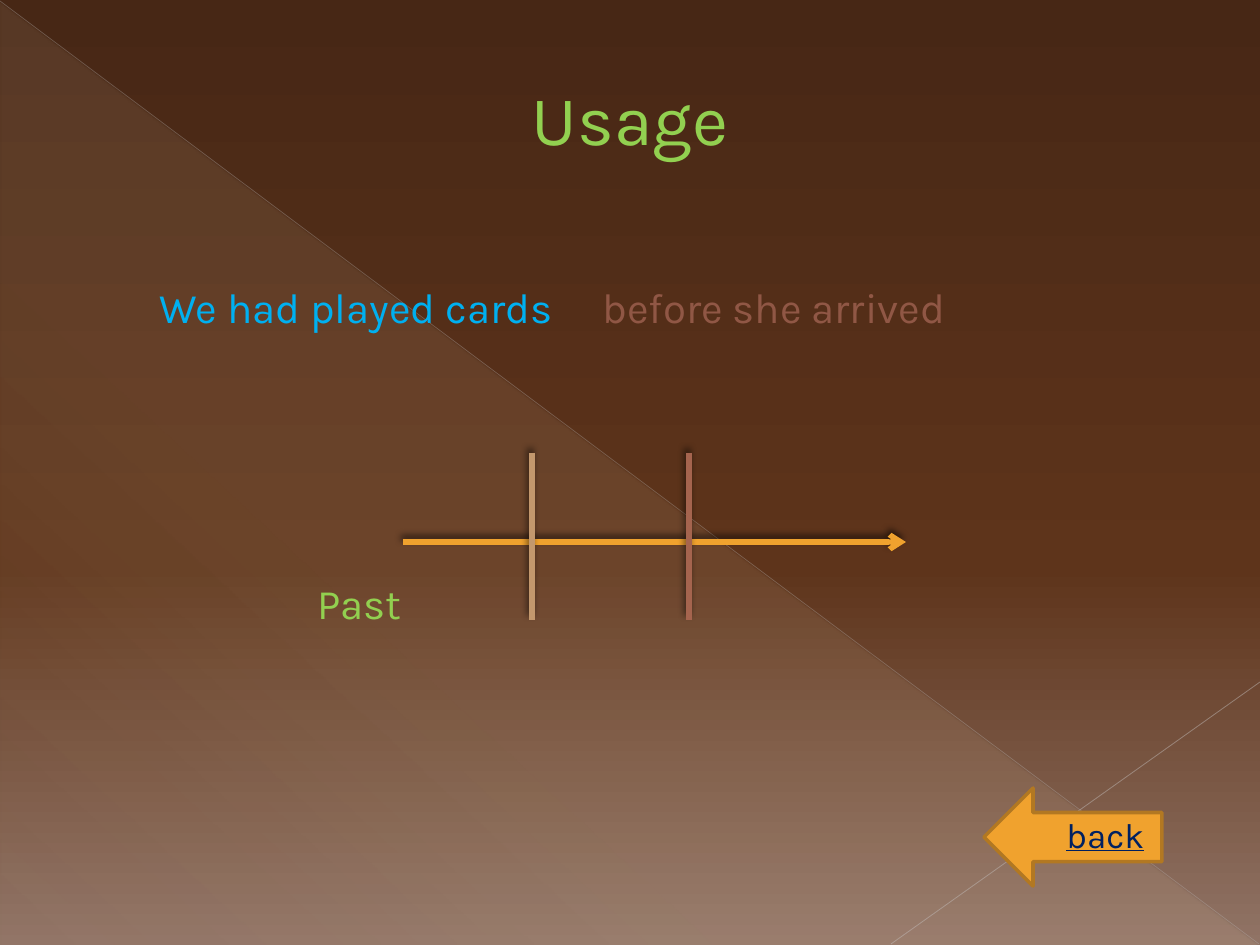
import lxml.etree
import pptx
import pptx.dml.color
import pptx.enum.shapes
import pptx.enum.text
import pptx.oxml
import pptx.oxml.ns
import pptx.util

EMU_PER_PX = 914400 / 126
FONT = "Karla"
GREEN, BLUE, BROWN, NAVY = "92D050", "00B0F0", "905745", "002060"
AMBER, DARK_AMBER, TAN, RUST = "F0A22E", "B27822", "C3986D", "A5644E"
CREAM = "FBEEC9"
SHAPES = pptx.enum.shapes.MSO_SHAPE
NS = pptx.oxml.ns.nsdecls("a")


def px(*lengths):
    return [pptx.util.Emu(round(length * EMU_PER_PX)) for length in lengths]


def rgb(color):
    return pptx.dml.color.RGBColor.from_string(color)


def set_alpha(solid_fill, percent):
    color = solid_fill.find(pptx.oxml.ns.qn("a:srgbClr"))
    alpha = lxml.etree.SubElement(color, pptx.oxml.ns.qn("a:alpha"))
    alpha.set("val", str(percent * 1000))


def make_gradient(owner, stops, angle):
    """Replace the solid fill directly inside owner; stops are (position, color, opacity)."""
    stop_xml = "".join(
        f'<a:gs pos="{position * 1000}"><a:srgbClr val="{color}">'
        f'<a:alpha val="{opacity * 1000}"/></a:srgbClr></a:gs>'
        for position, color, opacity in stops
    )
    gradient = pptx.oxml.parse_xml(
        f'<a:gradFill {NS} rotWithShape="1"><a:gsLst>{stop_xml}</a:gsLst>'
        f'<a:lin ang="{angle * 60000}" scaled="0"/></a:gradFill>'
    )
    owner.replace(owner.find(pptx.oxml.ns.qn("a:solidFill")), gradient)


class SlideBuilder:
    def __init__(self, slide):
        self.slide = slide

    def background(self, stops, angle):
        self.slide.background.fill.solid()
        make_gradient(self.slide.element.find(".//" + pptx.oxml.ns.qn("p:bgPr")), stops, angle)

    def shape(self, kind, box, fill):
        shape = self.slide.shapes.add_shape(kind, *px(*box))
        shape.shadow.inherit = False
        shape.fill.solid()
        shape.fill.fore_color.rgb = rgb(fill)
        shape.line.fill.background()
        return shape

    def line(self, start, end, color, width, opacity=100, shadow=False, arrow=False):
        line = self.slide.shapes.add_connector(
            pptx.enum.shapes.MSO_CONNECTOR.STRAIGHT, *px(*start, *end))
        line.line.width = pptx.util.Pt(width)
        line.line.color.rgb = rgb(color)
        properties = line.line._get_or_add_ln()
        if opacity < 100:
            set_alpha(properties.find(pptx.oxml.ns.qn("a:solidFill")), opacity)
        if arrow:
            tail = lxml.etree.SubElement(properties, pptx.oxml.ns.qn("a:tailEnd"))
            tail.set("type", "arrow")
        cast = (
            f'<a:outerShdw blurRad="{pptx.util.Pt(4)}" dist="{pptx.util.Pt(3)}" '
            f'dir="{245 * 60000}" rotWithShape="0">'
            '<a:srgbClr val="000000"><a:alpha val="60000"/></a:srgbClr></a:outerShdw>'
        ) if shadow else ""
        line._element.spPr.append(
            pptx.oxml.parse_xml(f"<a:effectLst {NS}>{cast}</a:effectLst>"))

    def text(self, wording, box, size, color, centered=False, underline=None):
        frame = self.slide.shapes.add_textbox(*px(*box)).text_frame
        frame.word_wrap = True
        frame.auto_size = pptx.enum.text.MSO_AUTO_SIZE.SHAPE_TO_FIT_TEXT
        paragraph = frame.paragraphs[0]
        paragraph.text = wording
        if centered:
            paragraph.alignment = pptx.enum.text.PP_ALIGN.CENTER
        font = paragraph.font
        font.name = FONT
        font.size = pptx.util.Pt(size)
        font.color.rgb = rgb(color)
        font.underline = underline


def main():
    presentation = pptx.Presentation()
    presentation.slide_width, presentation.slide_height = px(1260, 945)
    page = SlideBuilder(presentation.slides.add_slide(presentation.slide_layouts[6]))

    page.background([(0, "472715", 100), (60, "5E341B", 100), (100, "907365", 100)], 90)
    sheen = page.shape(SHAPES.RIGHT_TRIANGLE, (1, 3, 1257, 942), CREAM)
    make_gradient(sheen._element.spPr, [(0, CREAM, 10), (70, CREAM, 8), (100, CREAM, 1)], 133)
    page.line((0, 1), (1259, 944), "BCB7B4", 0.39, opacity=35)
    page.line((1260, 682), (891, 944), "C4BFBD", 0.47, opacity=45)

    page.text("Usage", (0, 69, 1260, 97), 40, GREEN, centered=True)

    page.line((403, 542), (906, 542), AMBER, 3, shadow=True, arrow=True)
    page.text("Past", (305, 571, 118, 63), 24, GREEN)
    for event_x, color in ((532, TAN), (689, RUST)):
        page.line((event_x, 453), (event_x, 620), color, 3, shadow=True)

    page.text("We had played cards", (147, 275, 536, 63), 24, BLUE)
    page.text("before she arrived", (590, 275, 452, 63), 24, BROWN)

    back_arrow = page.shape(SHAPES.RIGHT_ARROW, (984, 788, 178, 98), AMBER)
    back_arrow.rotation = 180
    back_arrow.line.color.rgb = rgb(DARK_AMBER)
    back_arrow.line.width = pptx.util.Pt(2)
    page.text("back", (1054, 807, 137, 55), 20, NAVY, underline=True)

    presentation.save("out.pptx")


if __name__ == "__main__":
    main()
